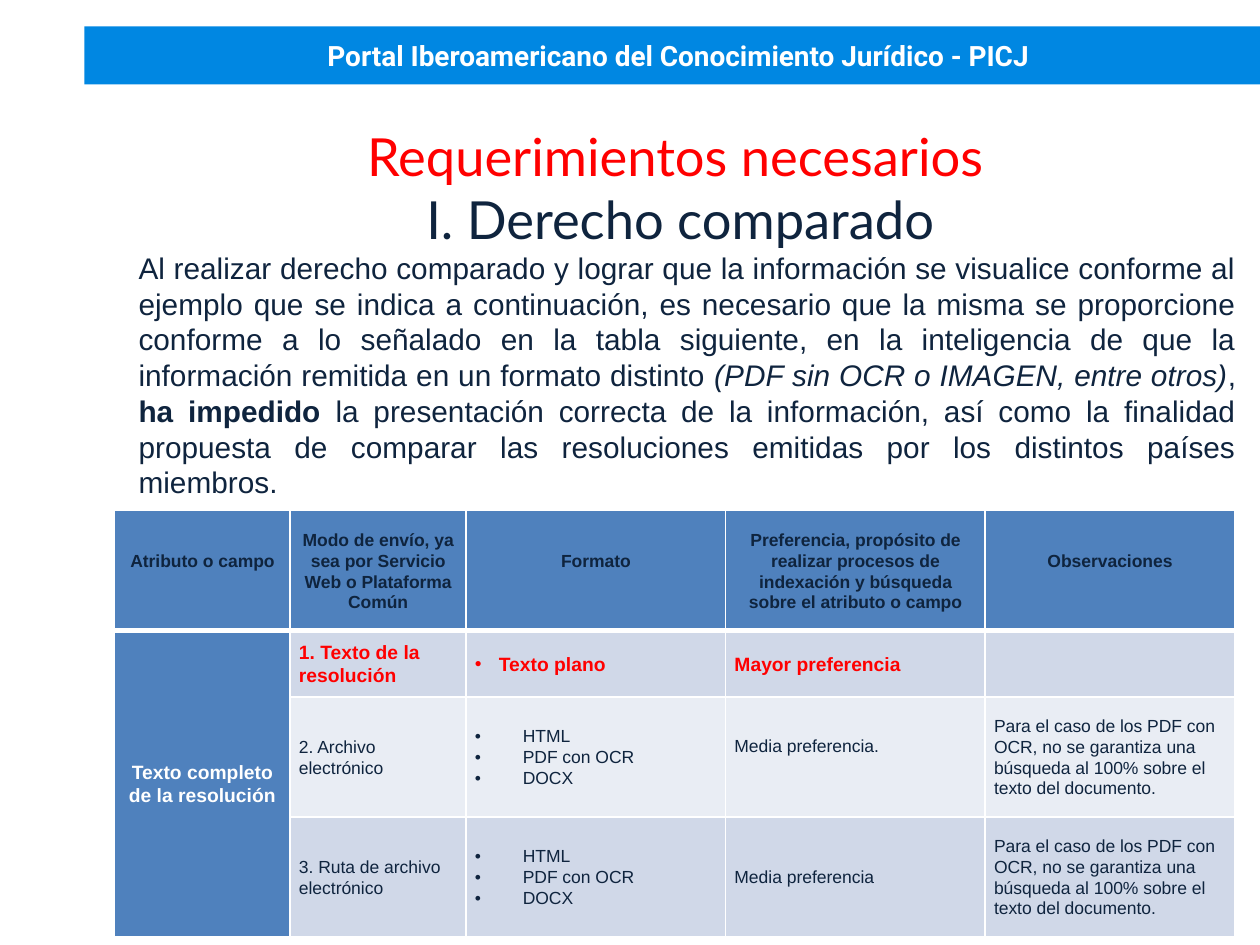
"""Build the slide on the data requirements for comparative law."""
from dataclasses import dataclass

from lxml.etree import SubElement
from pptx import Presentation
from pptx.dml.color import RGBColor as Rgb
from pptx.enum.shapes import MSO_SHAPE as Shape
from pptx.enum.text import MSO_ANCHOR as Anchor, PP_ALIGN as Align
from pptx.oxml.ns import qn
from pptx.util import Inches, Pt


@dataclass(frozen=True)
class Theme:
    banner: str = "0087E2"
    header: str = "4F81BD"
    band_dark: str = "D0D8E8"
    band_light: str = "E9EDF4"
    ink: str = "0F243E"
    accent: str = "FF0000"
    white: str = "FFFFFF"
    banner_font: str = "Roboto"
    heading_font: str = "Lato"
    text_font: str = "Arial"
    banner_size: int = 16
    heading_size: int = 30
    body_size: int = 17
    strong_size: int = 11
    cell_size: int = 10


theme = Theme()


def add_run(paragraph, text, font, size, color, bold=False, italic=False):
    run = paragraph.add_run()
    run.text = text
    run.font.name, run.font.size = font, Pt(size)
    run.font.bold, run.font.italic = bold, italic
    run.font.color.rgb = Rgb.from_string(color)


def set_indent(paragraph, left, hanging=0, bullet=None):
    properties = paragraph._p.get_or_add_pPr()
    properties.set("marL", str(Inches(left)))
    properties.set("indent", str(-Inches(hanging)))
    if bullet:
        SubElement(properties, qn("a:buFont")).set("typeface", theme.text_font)
        SubElement(properties, qn("a:buChar")).set("char", bullet)


deck = Presentation()
deck.slide_width, deck.slide_height = Inches(10), Inches(7.5)
col, row = deck.slide_width / 100, deck.slide_height / 100
slide = deck.slides.add_slide(deck.slide_layouts[6])
content_left, content_width = int(9.1 * col), int(89 * col)

banner = slide.shapes.add_shape(
    Shape.RECTANGLE, int(6.7 * col), int(2.8 * row), int(93.3 * col), int(6.13 * row))
banner.shadow.inherit = False
banner.fill.solid()
banner.fill.fore_color.rgb = Rgb.from_string(theme.banner)
banner.line.fill.background()
banner_text = banner.text_frame
banner_text.margin_left = Inches(0.1)
banner_text.margin_top = banner_text.margin_right = banner_text.margin_bottom = 0
banner_text.vertical_anchor = Anchor.MIDDLE
banner_text.paragraphs[0].alignment = Align.CENTER
add_run(banner_text.paragraphs[0], "Portal Iberoamericano del Conocimiento Jurídico - PICJ",
        theme.banner_font, theme.banner_size, theme.white, bold=True)

intro = slide.shapes.add_textbox(
    content_left, int(13.1 * row), content_width, int(81.87 * row)).text_frame
intro.word_wrap = True
intro.margin_left = intro.margin_top = intro.margin_right = intro.margin_bottom = 0
heading = intro.paragraphs[0]
for paragraph, indent, text, color in (
        (heading, 0, "Requerimientos necesarios", theme.accent),
        (intro.add_paragraph(), 0.08, "I. Derecho comparado", theme.ink)):
    paragraph.alignment = Align.CENTER
    set_indent(paragraph, indent)
    add_run(paragraph, text, theme.heading_font, theme.heading_size, color)
explanation = intro.add_paragraph()
explanation.alignment = Align.JUSTIFY
set_indent(explanation, 0.19)
for text, bold, italic in (
        ("Al realizar derecho comparado y lograr que la información se visualice conforme al "
         "ejemplo que se indica a continuación, es necesario que la misma se proporcione "
         "conforme a lo señalado en la tabla siguiente, en la inteligencia de que la "
         "información remitida en un formato distinto ", False, False),
        ("(PDF sin OCR o IMAGEN, entre otros)", False, True),
        (", ", False, False),
        ("ha impedido ", True, False),
        ("la presentación correcta de la información, así como la finalidad propuesta de "
         "comparar las resoluciones emitidas por los distintos países miembros.", False, False)):
    add_run(explanation, text, theme.text_font, theme.body_size, theme.ink, bold, italic)

formats = "HTML\nPDF con OCR\nDOCX"
remark = ("Para el caso de los PDF con OCR, no se garantiza una búsqueda al 100% "
          "sobre el texto del documento.")
requirements = (
    ("Atributo o campo", "Modo de envío, ya sea por Servicio Web o Plataforma Común", "Formato",
     "Preferencia, propósito de realizar procesos de indexación y búsqueda sobre el atributo "
     "o campo", "Observaciones"),
    ("Texto completo de la resolución", "1. Texto de la resolución", "Texto plano",
     "Mayor preferencia", ""),
    ("", "2. Archivo electrónico", formats, "Media preferencia.", remark),
    ("", "3. Ruta de archivo electrónico", formats, "Media preferencia", remark),
)
row_fills = (theme.header, theme.band_dark, theme.band_light, theme.band_dark)
column_shares, row_shares = (13.93, 13.97, 20.6, 20.6, 19.8), (12.7, 7.05, 12.7, 12.7)
header_drops = (0.32, 0.15, 0.32, 0.15, 0.32)

table = slide.shapes.add_table(
    len(row_shares), len(column_shares), content_left, int(54 * row),
    content_width, int(sum(row_shares) * row)).table
for column, share in zip(table.columns, column_shares):
    column.width = int(share * col)
for line, share in zip(table.rows, row_shares):
    line.height = int(share * row)
table.cell(1, 0).merge(table.cell(3, 0))

for r, entries in enumerate(requirements):
    for c, entry in enumerate(entries):
        cell = table.cell(r, c)
        is_header, is_label, is_preferred = r == 0, r > 0 and c == 0, r == 1
        cell.margin_left = cell.margin_right = Inches(0.07)
        cell.margin_top = Inches(header_drops[c]) if is_header else 0
        cell.margin_bottom = Inches(0.17) if (r, c) == (2, 3) else 0
        cell.vertical_anchor = Anchor.TOP if is_header else Anchor.MIDDLE
        for side in ("L", "R", "T", "B"):
            thick = (is_header and side == "B") or (is_preferred and side == "T")
            border = SubElement(cell._tc.get_or_add_tcPr(), qn(f"a:ln{side}"),
                                w=str(Pt(3 if thick else 1)))
            SubElement(SubElement(border, qn("a:solidFill")), qn("a:srgbClr"), val=theme.white)
        cell.fill.solid()
        cell.fill.fore_color.rgb = Rgb.from_string(theme.header if is_label else row_fills[r])
        if not entry:
            continue
        color = theme.white if is_label else theme.accent if is_preferred else theme.ink
        size = theme.strong_size if is_preferred else theme.cell_size
        for i, text in enumerate(entry.split("\n")):
            paragraph = cell.text_frame.add_paragraph() if i else cell.text_frame.paragraphs[0]
            paragraph.alignment = Align.CENTER if is_header or is_label else Align.LEFT
            paragraph.line_spacing = 1.07
            if c == 2 and not is_header:
                hanging = 0.19 if is_preferred else 0.38
                set_indent(paragraph, hanging, hanging, "•")
            add_run(paragraph, text, theme.text_font, size, color, bold=r < 2)

deck.save("out.pptx")
